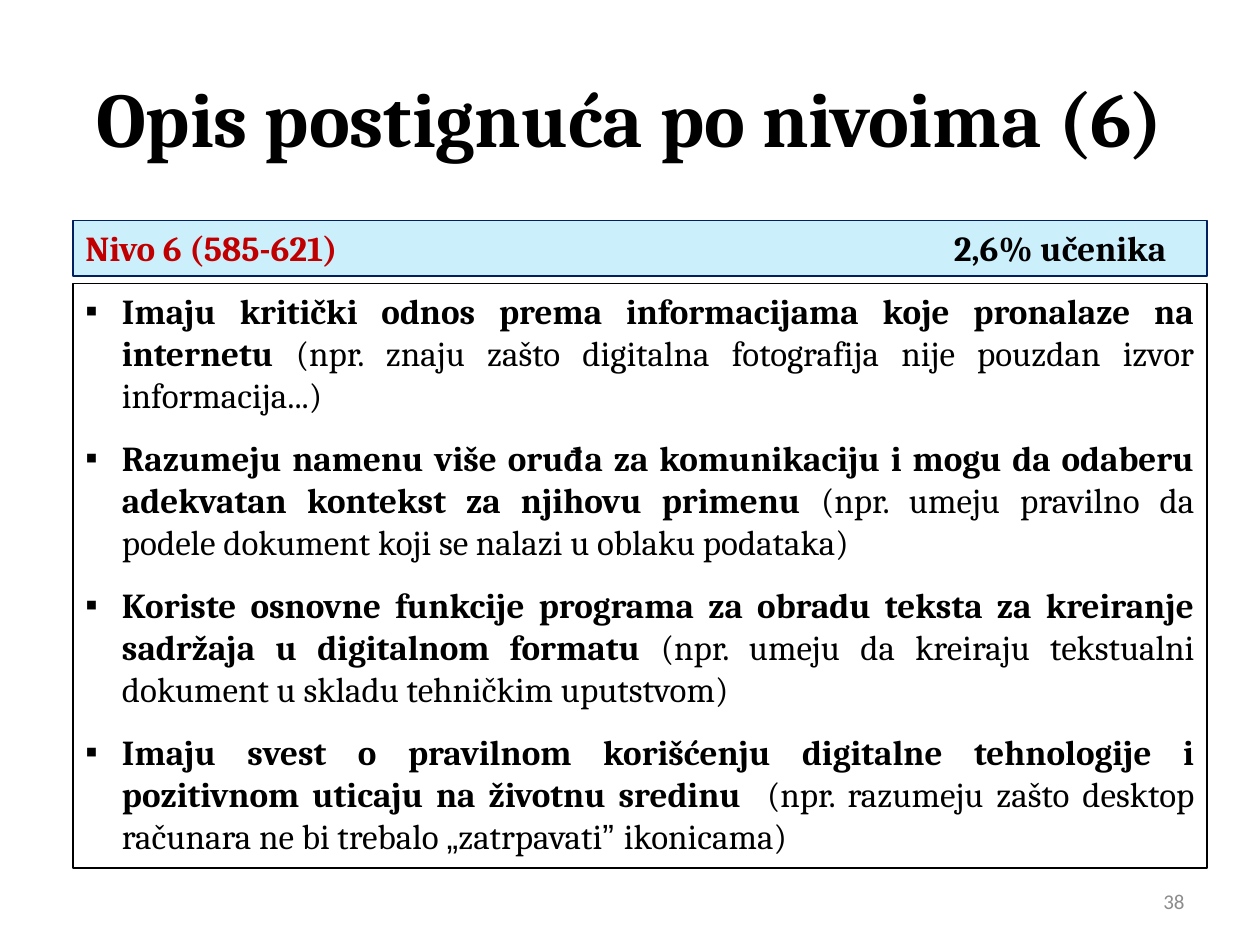
from lxml import etree
from pptx import Presentation, util as u
from pptx.dml.color import RGBColor
from pptx.enum import shapes, text
from pptx.oxml import ns

BODY_FONT = "Cambria"
QUOTE_FONT = "Arial"
ACHIEVEMENTS = [
    ("Imaju kritički odnos prema informacijama koje pronalaze na internetu ",
     ["(npr. znaju zašto digitalna fotografija nije pouzdan izvor informacija...)"]),
    ("Razumeju namenu više oruđa za komunikaciju i mogu da odaberu adekvatan kontekst za njihovu primenu ",
     ["(npr. umeju pravilno da podele dokument koji se nalazi u oblaku podataka)"]),
    ("Koriste osnovne funkcije programa za obradu teksta za kreiranje sadržaja u digitalnom formatu ",
     ["(npr. umeju da kreiraju tekstualni dokument u skladu tehničkim uputstvom)"]),
    ("Imaju svest o pravilnom korišćenju digitalne tehnologije i pozitivnom uticaju na životnu sredinu  ",
     ["(npr. razumeju zašto desktop računara ne bi trebalo ", "„", "zatrpavati", "” ", "ikonicama)"]),
]


def color(value):
    """Turn a hex string into a colour."""
    return RGBColor.from_string(value)


def add_child(parent, tag, **attributes):
    """Append a DrawingML element to its parent."""
    return etree.SubElement(parent, ns.qn(tag), attributes)


def format_run(run, size, value="000000", bold=False, font=BODY_FONT):
    """Set the font of one run."""
    run.font.size = u.Pt(size)
    run.font.name = font
    run.font.bold = bold
    run.font.color.rgb = color(value)


def add_run(paragraph, wording, **style):
    """Append a formatted 20 point run."""
    run = paragraph.add_run()
    run.text = wording
    format_run(run, 20, **style)


def add_box(slide, left, top, width, height, line):
    """Add an unfilled rectangle whose height follows its text."""
    shape = slide.shapes.add_shape(shapes.MSO_SHAPE.RECTANGLE, left, top, width, height)
    shape.shadow.inherit = False
    shape.fill.background()
    shape.line.color.rgb = color(line)
    shape.line.width = u.Pt(0.75)
    frame = shape.text_frame
    frame.word_wrap = True
    frame.auto_size = text.MSO_AUTO_SIZE.SHAPE_TO_FIT_TEXT
    frame.vertical_anchor = text.MSO_ANCHOR.TOP
    return shape


def place_title(slide, left, top, width, height):
    """Move and format the title placeholder."""
    title = slide.shapes.title
    title.left, title.top, title.width, title.height = left, top, width, height
    title.text_frame.text = "Opis postignuća po nivoima (6)"
    title.text_frame.vertical_anchor = text.MSO_ANCHOR.MIDDLE
    paragraph = title.text_frame.paragraphs[0]
    paragraph.alignment = text.PP_ALIGN.CENTER
    run = paragraph.runs[0]
    format_run(run, 44, bold=True)
    properties = run.font._element
    outline = add_child(properties, "a:ln", w=str(u.Pt(0.75)))
    add_child(add_child(outline, "a:solidFill"), "a:srgbClr", val="000000")
    properties.insert(0, outline)


def add_level_bar(slide, left, top, width, height):
    """Add the level heading with the share of pupils at a right tab."""
    bar = add_box(slide, left, top, width, height, "002060")
    bar.fill.solid()
    bar.fill.fore_color.rgb = color("00B0F0")
    fill = bar._element.spPr.find(ns.qn("a:solidFill"))
    add_child(fill[0], "a:alpha", val="20000")
    paragraph = bar.text_frame.paragraphs[0]
    paragraph.alignment = text.PP_ALIGN.LEFT
    tabs = add_child(paragraph._p.get_or_add_pPr(), "a:tabLst")
    add_child(tabs, "a:tab", pos=str(width - u.Inches(0.42)), algn="r")
    add_run(paragraph, "Nivo 6 (585-621)\t", value="C00000", bold=True)
    add_run(paragraph, "2,6% učenika", bold=True)


def add_achievements(slide, left, top, width, height):
    """Add the bulleted list of achievements."""
    frame = add_box(slide, left, top, width, height, "000000").text_frame
    for index, (skill, example) in enumerate(ACHIEVEMENTS):
        paragraph = frame.add_paragraph() if index else frame.paragraphs[0]
        paragraph.alignment = text.PP_ALIGN.JUSTIFY
        paragraph.space_before = paragraph.space_after = u.Pt(6)
        properties = paragraph._p.get_or_add_pPr()
        indent = u.Inches(0.29)
        properties.set("marL", str(indent))
        properties.set("indent", str(-indent))
        add_child(properties, "a:buFont", typeface="Arial")
        add_child(properties, "a:buChar", char="▪")
        add_run(paragraph, skill, bold=True)
        for part in example:
            add_run(paragraph, part, font=QUOTE_FONT if part.strip() in "„”" else BODY_FONT)


def add_page_number(slide, left, top, width, height):
    """Add the page number at the lower right."""
    frame = slide.shapes.add_textbox(left, top, width, height).text_frame
    frame.word_wrap = True
    frame.vertical_anchor = text.MSO_ANCHOR.MIDDLE
    frame.text = "38"
    paragraph = frame.paragraphs[0]
    paragraph.alignment = text.PP_ALIGN.RIGHT
    format_run(paragraph.runs[0], 12, "8C8C8C", font="Calibri")


def main():
    """Build and save the presentation."""
    presentation = Presentation()
    presentation.slide_width, presentation.slide_height = u.Inches(10), u.Inches(7.5)
    slide = presentation.slides.add_slide(presentation.slide_layouts.get_by_name("Title Only"))
    left, width = u.Inches(0.58), u.Inches(9)
    place_title(slide, u.Inches(0.5), u.Inches(0.3), width, u.Inches(1.25))
    add_page_number(slide, u.Inches(7.17), u.Inches(6.95), u.Inches(2.33), u.Inches(0.4))
    add_achievements(slide, left, u.Inches(2.25), width, u.Inches(4.64))
    add_level_bar(slide, left, u.Inches(1.75), width, u.Inches(0.44))
    presentation.save("out.pptx")


if __name__ == "__main__":
    main()
